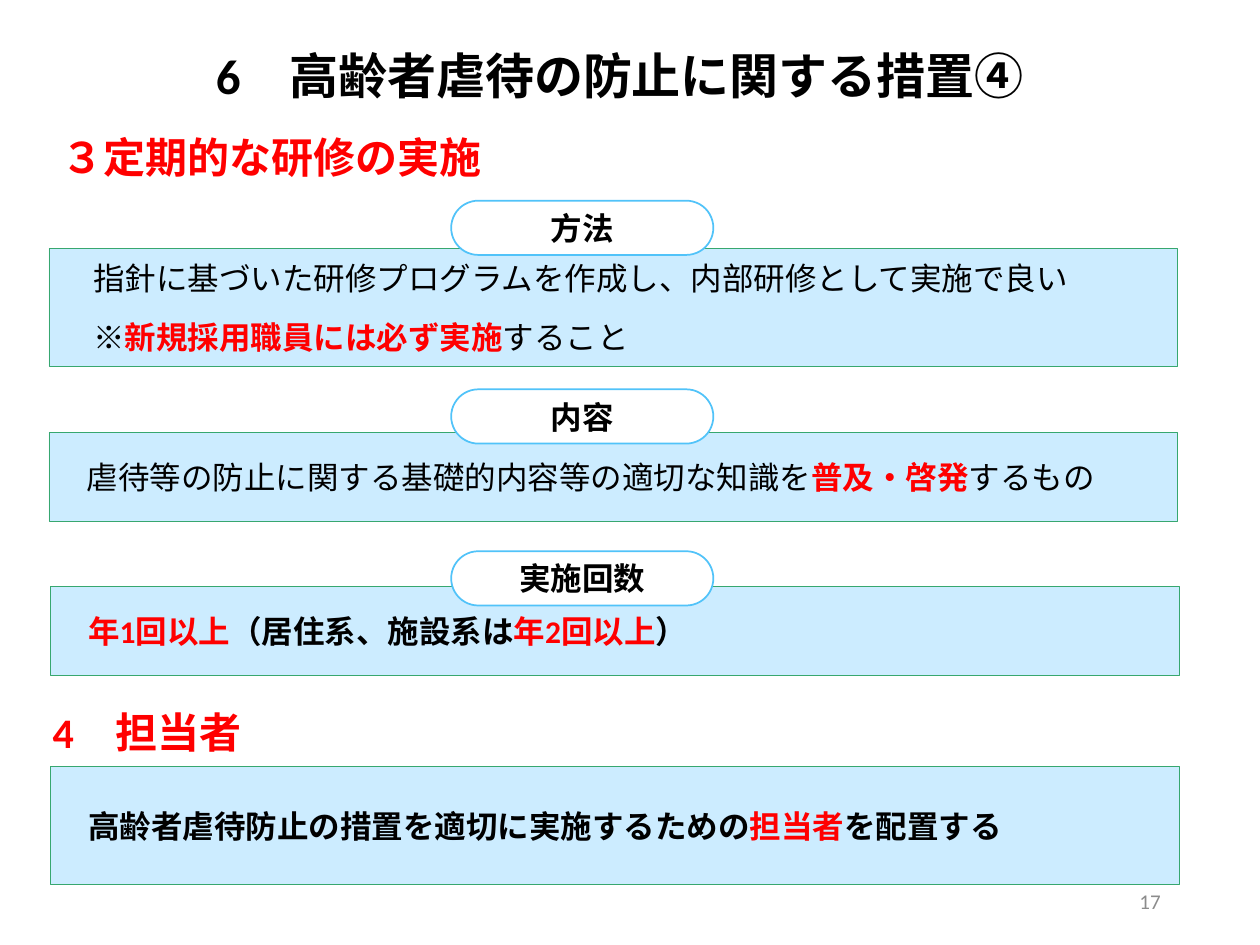
from pptx import Presentation
from pptx.dml.color import RGBColor
from pptx.enum.shapes import MSO_SHAPE
from pptx.enum.text import MSO_ANCHOR, PP_ALIGN
from pptx.util import Pt

FONT = "Calibri"
COLORS = {
    "text": "000000", "accent": "FF0000", "page": "8C8C8C",
    "panel": "CCECFF", "panel_line": "37A76F",
    "label": "FFFFFF", "label_line": "51C3F9",
}
PANEL_WIDTH = 645
LABEL_BOX = (257.8, 149.8, 31)  # left, width, height


def rgb(name):
    return RGBColor.from_string(COLORS[name])


def write(frame, paragraphs, size, align=PP_ALIGN.LEFT):
    """Fill a frame; each paragraph is a list of (text, colour, bold)."""
    frame.word_wrap = True
    frame.vertical_anchor = MSO_ANCHOR.MIDDLE
    for index, parts in enumerate(paragraphs):
        paragraph = frame.paragraphs[0] if index == 0 else frame.add_paragraph()
        paragraph.alignment = align
        for words, color, bold in parts:
            run = paragraph.add_run()
            run.text = words
            run.font.name = FONT
            run.font.size = Pt(size)
            run.font.bold = bold
            run.font.color.rgb = rgb(color)


def add_heading(slide, box, words, size=24, color="accent",
                align=PP_ALIGN.LEFT, right_inset=7.2):
    frame = slide.shapes.add_textbox(*map(Pt, box)).text_frame
    write(frame, [[(words, color, True)]], size, align)
    frame.margin_right = Pt(right_inset)
    frame.paragraphs[0].line_spacing = 0.9


def add_page_number(slide, box, number):
    frame = slide.shapes.add_textbox(*map(Pt, box)).text_frame
    write(frame, [[(number, "page", False)]], 12, PP_ALIGN.RIGHT)


def add_block(slide, kind, box, fill, line, line_width):
    block = slide.shapes.add_shape(kind, *map(Pt, box))
    block.shadow.inherit = False
    block.fill.solid()
    block.fill.fore_color.rgb = rgb(fill)
    block.line.color.rgb = rgb(line)
    block.line.width = Pt(line_width)
    return block


def add_panel(slide, box, paragraphs, indent=14.4):
    panel = add_block(slide, MSO_SHAPE.RECTANGLE, box, "panel", "panel_line", 0.5)
    frame = panel.text_frame
    write(frame, paragraphs, 18)
    frame.margin_left = Pt(7.2 + indent)
    for paragraph in frame.paragraphs:
        paragraph.space_before = paragraph.space_after = Pt(6)


def add_label(slide, top, words):
    left, width, height = LABEL_BOX
    label = add_block(slide, MSO_SHAPE.ROUNDED_RECTANGLE,
                      (left, top, width, height), "label", "label_line", 1)
    label.adjustments[0] = 0.5
    write(label.text_frame, [[(words, "text", True)]], 18, PP_ALIGN.CENTER)


def build_slide(slide):
    # Title, set slightly left of its box centre
    add_heading(slide, (42.5, 18, 647.3, 53.3), "6　高齢者虐待の防止に関する措置④",
                28, "text", PP_ALIGN.CENTER, right_inset=31.2)

    # Section 3: regular training
    add_heading(slide, (28, 74.2, 641, 33.8), "３定期的な研修の実施")
    add_panel(slide, (28, 141.8, PANEL_WIDTH, 67.7), [
        [("指針に基づいた研修プログラムを作成し、内部研修として実施で良い", "text", False)],
        [("※", "text", False), ("新規採用職員には必ず実施", "accent", True),
         ("すること", "text", False)],
    ], indent=18)
    add_panel(slide, (28, 247, PANEL_WIDTH, 51), [
        [("虐待等の防止に関する基礎的内容等の適切な知識を", "text", False),
         ("普及・啓発", "accent", True), ("するもの", "text", False)],
    ])
    add_panel(slide, (28.8, 335.2, PANEL_WIDTH, 51), [
        [("年1回以上", "accent", True), ("（居住系、施設系は", "text", True),
         ("年2回以上", "accent", True), ("）", "text", True)],
    ])
    for top, words in ((114.7, "方法"), (222.5, "内容"), (315, "実施回数")):
        add_label(slide, top, words)

    # Section 4: person in charge
    add_heading(slide, (23, 403.2, 641, 33.8), "4　担当者")
    add_panel(slide, (28.8, 438, PANEL_WIDTH, 67.7), [
        [("高齢者虐待防止の措置を適切に実施するための", "text", True),
         ("担当者", "accent", True), ("を配置する", "text", True)],
    ])

    add_page_number(slide, (508.3, 500.4, 162, 28.8), "17")


def main():
    presentation = Presentation()
    presentation.slide_width, presentation.slide_height = Pt(720), Pt(540)
    build_slide(presentation.slides.add_slide(presentation.slide_layouts[6]))
    presentation.save("out.pptx")


if __name__ == "__main__":
    main()
